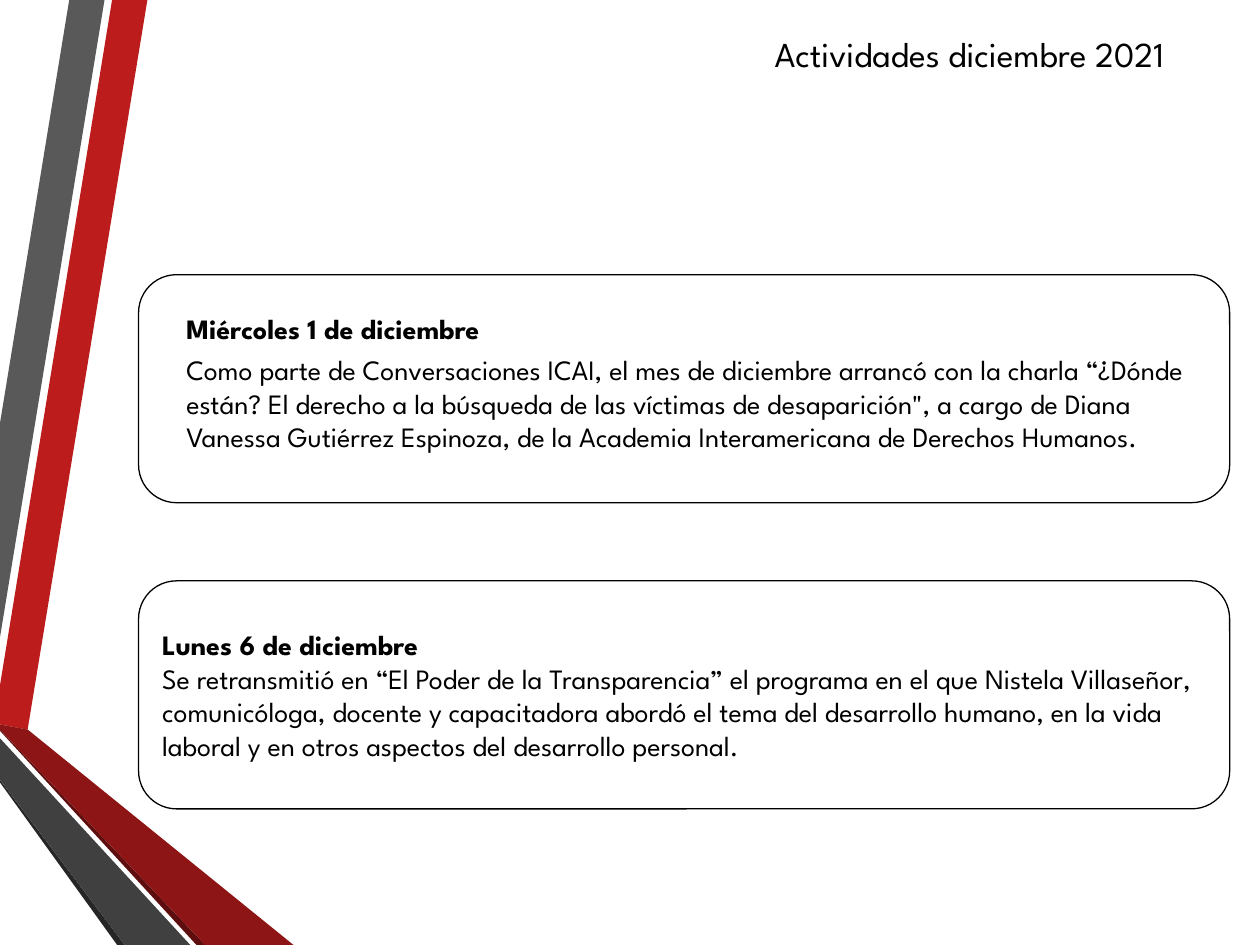
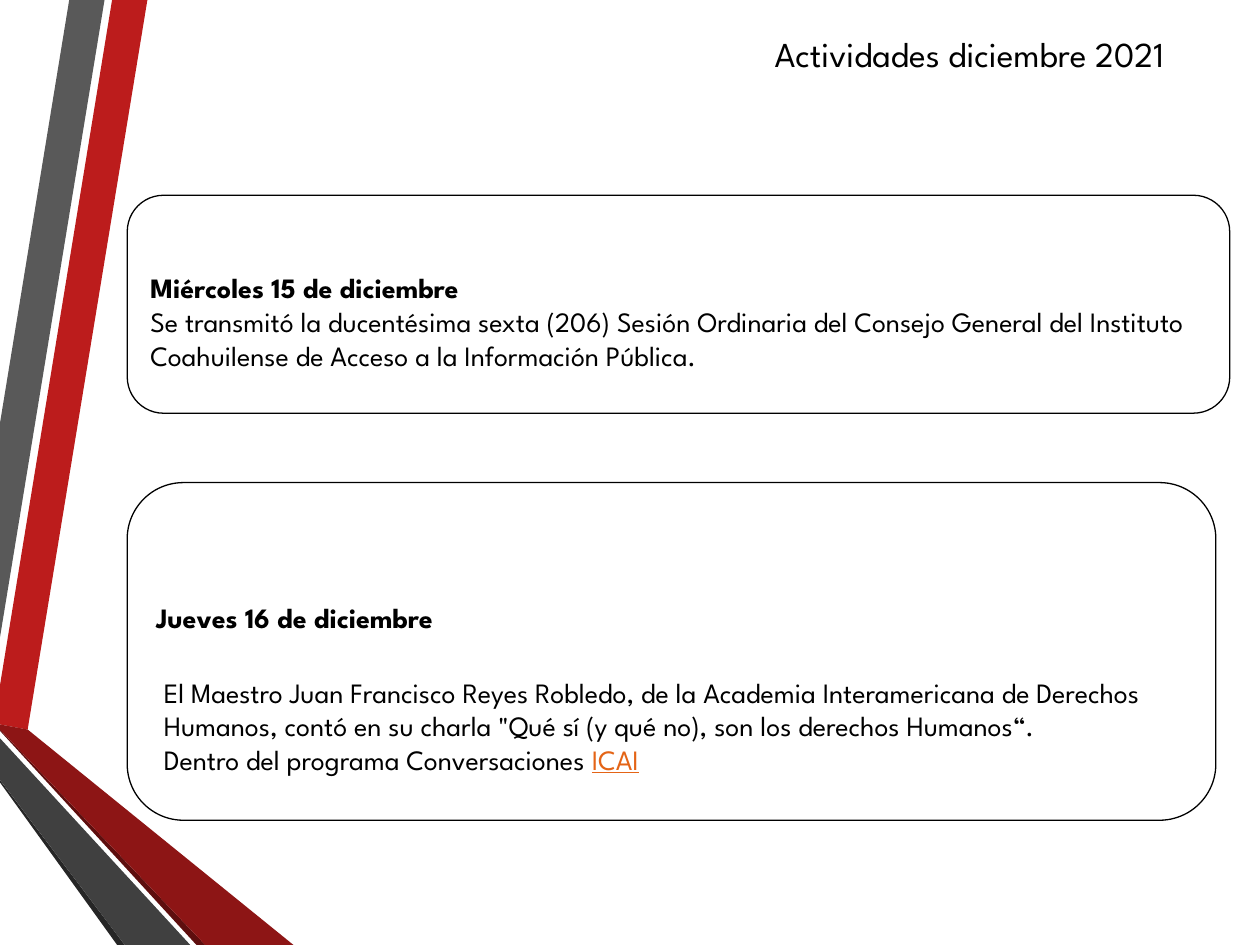
from dataclasses import dataclass
from typing import NamedTuple

from pptx import Presentation
from pptx import util as u
from pptx.dml.color import RGBColor
from pptx.enum import shapes, text

PX = 9144  # EMU per px, 100 px to the inch


class Box(NamedTuple):
    left: int
    top: int
    width: int
    height: int

    def emu(self):
        return [u.Emu(value * PX) for value in self]

    def inner(self, left, top, width, height):
        return Box(self.left + left, self.top + top, width, height)


@dataclass(frozen=True)
class Theme:
    font: str = "League Spartan"
    title_size: int = 20
    body_size: int = 16
    outline: float = 0.75
    ink: str = "000000"
    paper: str = "FFFFFF"
    link: str = "E46416"
    red: str = "BC1C1C"
    dark_red: str = "8D1515"
    deep_red: str = "5E0E0E"
    gray: str = "595959"
    dark_gray: str = "404040"
    deep_gray: str = "262626"


THEME = Theme()
PAGE = Box(0, 0, 1000, 750)
TITLE = "Actividades diciembre 2021"
MARGINS = (10, 5, 10, 5)  # left, top, right, bottom
LINE = 27  # height of one body line

# Ribbons, back to front, as corner points within the page
RIBBONS = [
    (THEME.red, [(0, 544), (0, 575), (22, 579), (117, 0), (89, 0)]),
    (THEME.gray, [(83, 0), (55, 0), (0, 336), (0, 506)]),
    (THEME.deep_gray, [(0, 619), (0, 621), (93, 750), (99, 750)]),
    (THEME.deep_red, [(0, 579), (0, 580), (156, 750), (163, 750)]),
    (THEME.dark_red, [(0, 579), (163, 750), (233, 750), (22, 579), (0, 575)]),
    (THEME.dark_gray, [(0, 619), (99, 750), (151, 750), (0, 586)]),
]


def color(value):
    return RGBColor.from_string(value)


def add_run(paragraph, words, size=THEME.body_size, bold=False, ink=THEME.ink, underline=None):
    run = paragraph.add_run()
    run.text = words
    run.font.name = THEME.font
    run.font.size = u.Pt(size)
    run.font.bold = bold
    run.font.underline = underline
    run.font.color.rgb = color(ink)


def prepare_frame(shape, anchor, margins=MARGINS):
    frame = shape.text_frame
    frame.word_wrap = True
    frame.auto_size = text.MSO_AUTO_SIZE.NONE
    frame.vertical_anchor = anchor
    (frame.margin_left, frame.margin_top,
     frame.margin_right, frame.margin_bottom) = [u.Emu(m * PX) for m in margins]
    return frame


def write(shape, paragraphs, anchor=text.MSO_ANCHOR.MIDDLE, margins=MARGINS):
    """Each paragraph is a list of (words, run format) pairs."""
    frame = prepare_frame(shape, anchor, margins)
    for index, runs in enumerate(paragraphs):
        paragraph = frame.add_paragraph() if index else frame.paragraphs[0]
        paragraph.alignment = text.PP_ALIGN.LEFT
        for words, run_format in runs:
            add_run(paragraph, words, **run_format)


def heading(words):
    return [(words, {"bold": True})]


def plain(words):
    return [(words, {})]


def add_ribbons(slide, box):
    for fill, points in RIBBONS:
        builder = slide.shapes.build_freeform(*points[0], scale=PX)
        builder.add_line_segments(points[1:], close=True)
        ribbon = builder.convert_to_shape(box.left * PX, box.top * PX)
        ribbon.shadow.inherit = False
        ribbon.fill.solid()
        ribbon.fill.fore_color.rgb = color(fill)
        ribbon.line.fill.background()


def add_title(slide, box):
    title = slide.shapes.title
    title.left, title.top, title.width, title.height = box.emu()
    paragraph = prepare_frame(title, text.MSO_ANCHOR.TOP).paragraphs[0]
    paragraph.alignment = text.PP_ALIGN.CENTER
    add_run(paragraph, TITLE, THEME.title_size)


def add_card(slide, box):
    card = slide.shapes.add_shape(shapes.MSO_SHAPE.FLOWCHART_ALTERNATE_PROCESS, *box.emu())
    card.shadow.inherit = False
    card.fill.background()
    card.line.color.rgb = color(THEME.ink)
    card.line.width = u.Pt(THEME.outline)
    return card


def add_text(slide, box, paragraph):
    write(slide.shapes.add_textbox(*box.emu()), [paragraph], text.MSO_ANCHOR.TOP)


def add_panel(slide, box, paragraphs):
    panel = slide.shapes.add_shape(shapes.MSO_SHAPE.RECTANGLE, *box.emu())
    panel.shadow.inherit = False
    panel.fill.solid()
    panel.fill.fore_color.rgb = color(THEME.paper)
    panel.line.fill.background()
    write(panel, paragraphs, margins=(0, 0, 0, 0))


def add_activity_slide(presentation):
    slide = presentation.slides.add_slide(presentation.slide_layouts.get_by_name("Title Only"))
    add_ribbons(slide, PAGE)
    add_title(slide, PAGE.inner(563, 21, 413, 44))
    return slide


def add_early_december(presentation):
    slide = add_activity_slide(presentation)
    talk = PAGE.inner(110, 218, 866, 181)
    broadcast = talk.inner(0, 243, talk.width, talk.height)

    # Talk on 1 December
    add_card(slide, talk)
    add_text(slide, talk.inner(28, 24, 819, 37), heading("Miércoles 1 de diciembre"))
    add_text(slide, talk.inner(28, 57, 819, 118), plain(
        "Como parte de Conversaciones ICAI, el mes de diciembre arrancó con la charla "
        "“¿Dónde están? El derecho a la búsqueda de las víctimas de desaparición\", a cargo "
        "de Diana Vanessa Gutiérrez Espinoza, de la Academia Interamericana de Derechos Humanos."))

    # Broadcast on 6 December
    write(add_card(slide, broadcast), [
        heading("Lunes 6 de diciembre"),
        plain("Se retransmitió en “El Poder de la Transparencia” el programa en el que Nistela "
              "Villaseñor, comunicóloga, docente y capacitadora abordó el tema del desarrollo "
              "humano, en la vida laboral y en otros aspectos del desarrollo personal."),
    ])


def add_mid_december(presentation):
    slide = add_activity_slide(presentation)
    session = PAGE.inner(101, 155, 875, 173)
    talk = PAGE.inner(101, 383, 864, 268)

    # Session on 15 December, set one line lower
    write(add_card(slide, session), [
        heading("Miércoles 15 de diciembre"),
        plain("Se transmitó la ducentésima sexta (206) Sesión Ordinaria del Consejo General "
              "del Instituto Coahuilense de Acceso a la Información Pública."),
    ], margins=(10, 5 + LINE, 10, 5))

    # Talk on 16 December, its heading raised to leave room for the panel
    write(add_card(slide, talk), [heading("Jueves 16 de diciembre")],
          margins=(10, 5, 10, 5 + 2 * LINE))
    add_panel(slide, talk.inner(29, 139, 803, 108), [
        plain("El Maestro Juan Francisco Reyes Robledo, de la Academia Interamericana de Derechos "
              "Humanos, contó en su charla \"Qué sí (y qué no), son los derechos Humanos“."),
        [("Dentro del programa Conversaciones ", {}),
         ("ICAI", {"ink": THEME.link, "underline": True})],
    ])


def main():
    presentation = Presentation()
    presentation.slide_width, presentation.slide_height = PAGE.emu()[2:]
    add_early_december(presentation)
    add_mid_december(presentation)
    presentation.save("out.pptx")


if __name__ == "__main__":
    main()
